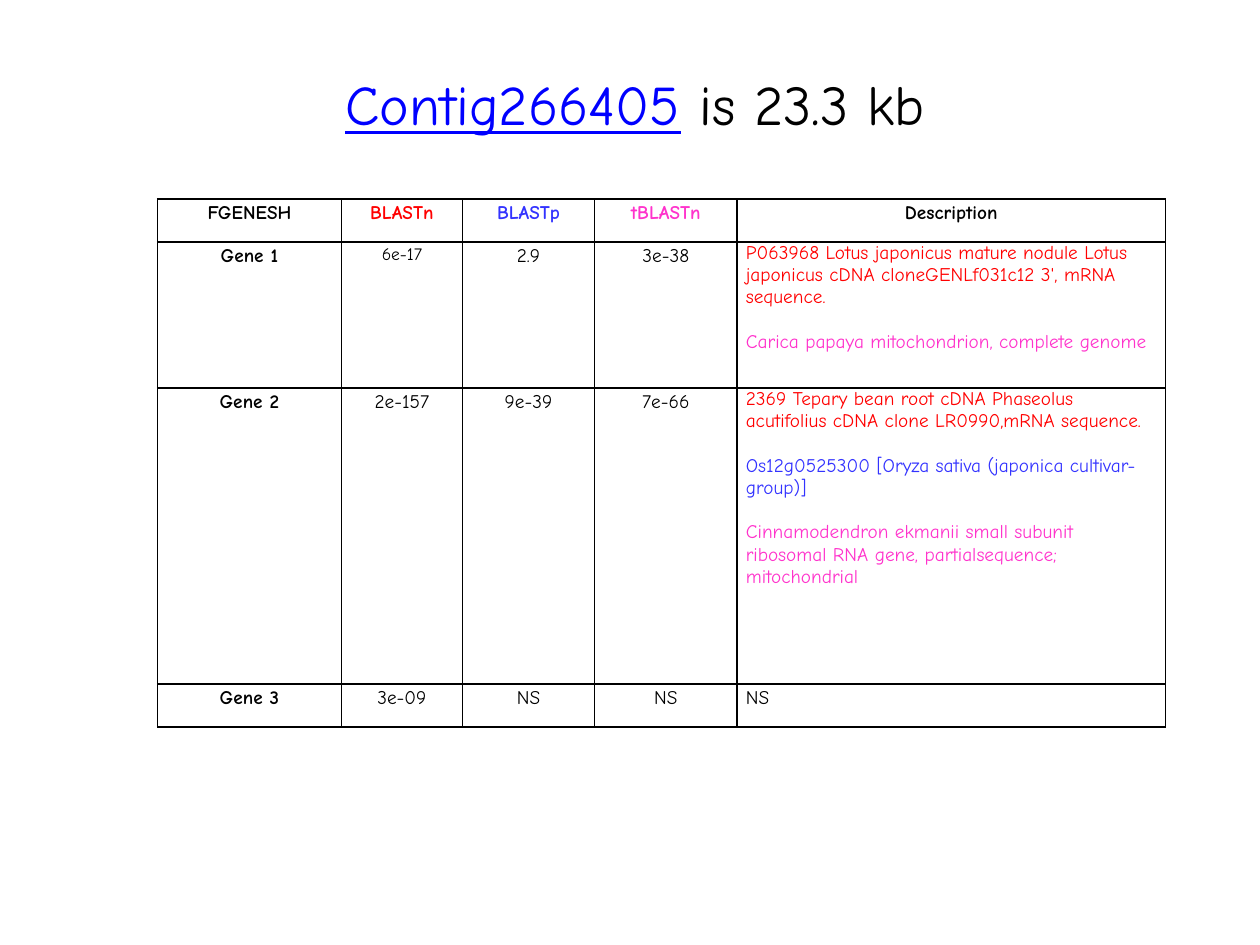
from lxml import etree
from pptx import Presentation
from pptx.dml.color import RGBColor
from pptx.enum.text import MSO_ANCHOR, PP_ALIGN as Align
from pptx.oxml.ns import qn
from pptx.util import Inches, Pt

BLACK = RGBColor(0x00, 0x00, 0x00)
LINK_BLUE = RGBColor(0x00, 0x00, 0xFF)
RED = RGBColor(0xFF, 0x00, 0x00)
BLUE = RGBColor(0x33, 0x33, 0xFF)
PINK = RGBColor(0xFF, 0x33, 0xCC)

FONT = "Comic Neue"
BODY_SIZE = 11
LOOSE = 1.15
HIT_GAP = Pt(12.7)

COLUMN_WIDTHS = [1.46, 0.96, 1.05, 1.13, 3.4]
ROW_HEIGHTS = [0.34, 1.16, 2.35, 0.34]
HEADERS = [("FGENESH", BLACK), ("BLASTn", RED), ("BLASTp", BLUE),
           ("tBLASTn", PINK), ("Description", BLACK)]
GENES = [
    ("Gene 1", ["6e-17", "2.9", "3e-38"], [
        ("P063968 Lotus japonicus mature nodule Lotus japonicus cDNA "
         "cloneGENLf031c12 3', mRNA sequence.", RED),
        ("Carica papaya mitochondrion, complete genome", PINK),
    ]),
    ("Gene 2", ["2e-157", "9e-39", "7e-66"], [
        ("2369 Tepary bean root cDNA Phaseolus acutifolius cDNA clone "
         "LR0990,mRNA sequence.", RED),
        ("Os12g0525300 [Oryza sativa (japonica cultivar-group)]", BLUE),
        ("Cinnamodendron ekmanii small subunit ribosomal RNA gene, "
         "partialsequence; mitochondrial", PINK),
    ]),
    ("Gene 3", ["3e-09", "NS", "NS"], [("NS", BLACK)]),
]


def write(paragraph, text, size=BODY_SIZE, color=BLACK, bold=False,
          underline=False, align=Align.CENTER, spacing=LOOSE):
    paragraph.alignment = align
    paragraph.line_spacing = spacing
    run = paragraph.add_run()
    run.text = text
    font = run.font
    font.name, font.size = FONT, Pt(size)
    font.bold, font.underline = bold, underline
    font.color.rgb = color


def add_title(slide):
    title = slide.shapes.add_textbox(Inches(0.83), Inches(0.5),
                                     Inches(8.42), Inches(0.64))
    title.text_frame.word_wrap = True
    heading = title.text_frame.paragraphs[0]
    write(heading, "Contig266405", size=32, color=LINK_BLUE, underline=True,
          spacing=1.0)
    write(heading, " is 23.3 kb", size=32, spacing=1.0)


def style_cell(cell):
    """Give the cell its insets, a 1 pt black border and no fill."""
    cell.margin_left = cell.margin_right = Inches(0.07)
    cell.margin_top = cell.margin_bottom = 0
    cell.vertical_anchor = MSO_ANCHOR.TOP
    properties = cell._tc.get_or_add_tcPr()
    for side in ("a:lnL", "a:lnR", "a:lnT", "a:lnB"):
        border = etree.SubElement(properties, qn(side), w=str(Pt(1)))
        fill = etree.SubElement(border, qn("a:solidFill"))
        etree.SubElement(fill, qn("a:srgbClr"), val=str(BLACK))
    cell.fill.background()


def write_description(cell, hits):
    frame = cell.text_frame
    spacing = 1.0 if len(hits) > 1 else LOOSE
    for index, (text, color) in enumerate(hits):
        paragraph = frame.add_paragraph() if index else frame.paragraphs[0]
        if index:
            paragraph.space_before = HIT_GAP
        write(paragraph, text, color=color, align=Align.LEFT, spacing=spacing)


def add_gene_table(slide):
    table = slide.shapes.add_table(
        len(ROW_HEIGHTS), len(COLUMN_WIDTHS), Inches(1.25), Inches(1.58),
        Inches(sum(COLUMN_WIDTHS)), Inches(sum(ROW_HEIGHTS))).table
    for column, width in zip(table.columns, COLUMN_WIDTHS):
        column.width = Inches(width)
    for row, height in zip(table.rows, ROW_HEIGHTS):
        row.height = Inches(height)
    for cell in table.iter_cells():
        style_cell(cell)

    for col, (label, color) in enumerate(HEADERS):
        write(table.cell(0, col).text_frame.paragraphs[0], label,
              color=color, bold=True)
    for row, (gene, e_values, hits) in enumerate(GENES, start=1):
        write(table.cell(row, 0).text_frame.paragraphs[0], gene, bold=True)
        for col, e_value in enumerate(e_values, start=1):
            size = 10 if e_value == "6e-17" else BODY_SIZE
            write(table.cell(row, col).text_frame.paragraphs[0], e_value,
                  size=size)
        write_description(table.cell(row, 4), hits)


def main():
    deck = Presentation()
    deck.slide_width, deck.slide_height = Inches(10), Inches(7.5)
    slide = deck.slides.add_slide(deck.slide_layouts[6])
    add_title(slide)
    add_gene_table(slide)
    deck.save("out.pptx")


if __name__ == "__main__":
    main()
